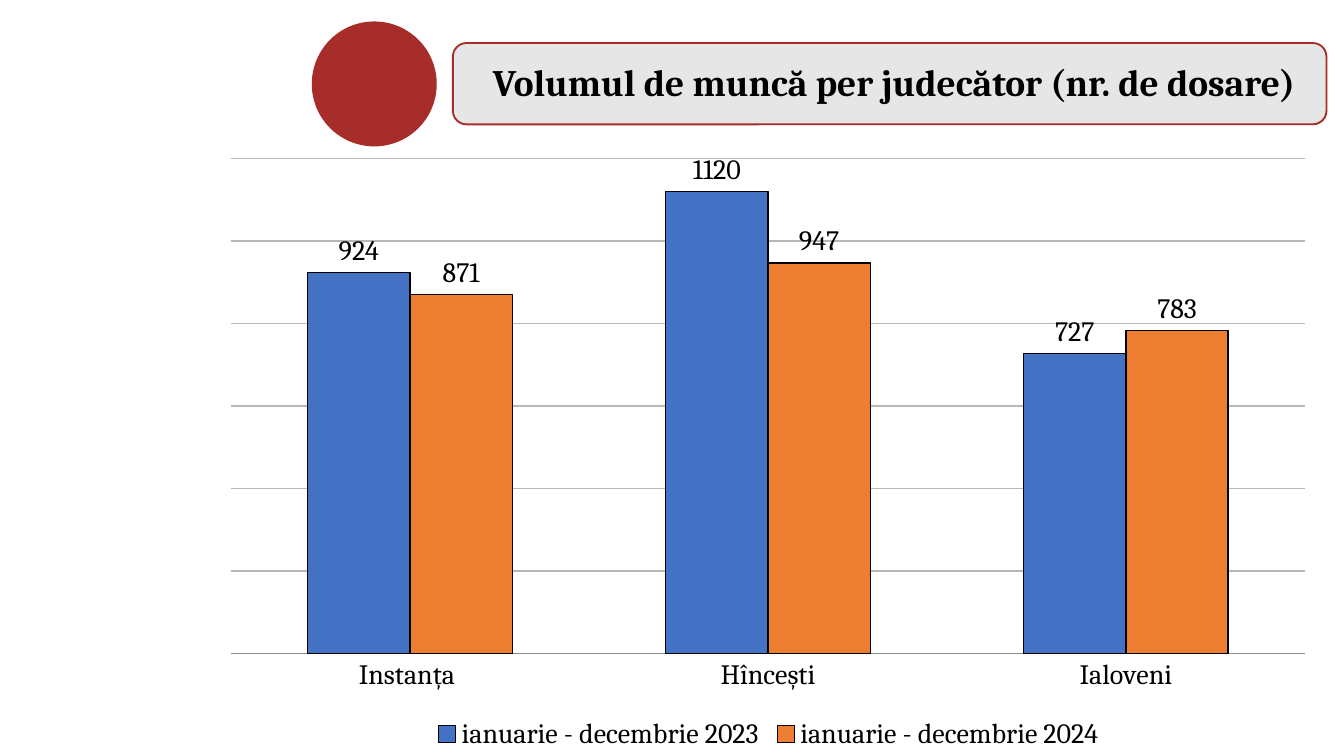
from typing import NamedTuple

from lxml import etree
from pptx import Presentation
from pptx.chart.data import CategoryChartData
from pptx.dml.color import RGBColor
from pptx.enum.chart import XL_CHART_TYPE, XL_LABEL_POSITION, XL_LEGEND_POSITION, XL_TICK_MARK
from pptx.enum.shapes import MSO_SHAPE
from pptx.enum.text import MSO_ANCHOR, MSO_AUTO_SIZE, PP_ALIGN
from pptx.oxml.ns import qn
from pptx.util import Pt

CLUSTERED = XL_CHART_TYPE.COLUMN_CLUSTERED
OUTSIDE_END = XL_LABEL_POSITION.OUTSIDE_END
BOTTOM = XL_LEGEND_POSITION.BOTTOM
NO_TICK = XL_TICK_MARK.NONE
OVAL = MSO_SHAPE.OVAL
ROUNDED = MSO_SHAPE.ROUNDED_RECTANGLE
MIDDLE = MSO_ANCHOR.MIDDLE
GROW = MSO_AUTO_SIZE.SHAPE_TO_FIT_TEXT
CENTER = PP_ALIGN.CENTER

SCALE = 4572  # EMU per px, 200 px to the inch
FONT = "Cambria"
RED, GREY, BLACK = "A72D2A", "E6E6E6", "000000"
GRID_GREY, AXIS_GREY = "B7B7B7", "8B8B8B"


class Box(NamedTuple):
    left: int
    top: int
    width: int
    height: int

    def emu(self) -> list[int]:
        return [length * SCALE for length in self]


class Panel(NamedTuple):
    preset: int
    box: Box
    fill: str
    line: str


class Series(NamedTuple):
    name: str
    values: tuple[int, ...]
    color: str
    number_format: str


PANELS = [
    Panel(OVAL, Box(464, 32, 186, 186), RED, ""),
    Panel(ROUNDED, Box(674, 64, 1300, 121), GREY, RED),
]
TITLE_BOX = Box(662, 86, 1338, 80)
CHART_BOX = Box(312, 218, 1664, 907)
PLOT_BOX = Box(344, 236, 1598, 737)
COURTS = ("Instanța ", "Hîncești", "Ialoveni")
SERIES = [
    Series("ianuarie - decembrie 2023", (924, 1120, 727), "4472C4", "0"),
    Series("ianuarie - decembrie 2024", (871, 947, 783), "ED7D31", "#,##0"),
]


def rgb(value: str) -> RGBColor:
    return RGBColor.from_string(value)


def set_line(line, color: str, width: float) -> None:
    line.color.rgb = rgb(color)
    line.width = Pt(width)


def set_font(font, size: int) -> None:
    font.name = FONT
    font.size = Pt(size)
    font.color.rgb = rgb(BLACK)


def add_panel(slide, panel: Panel) -> None:
    shape = slide.shapes.add_shape(panel.preset, *panel.box.emu())
    shape.shadow.inherit = False
    shape.fill.solid()
    shape.fill.fore_color.rgb = rgb(panel.fill)
    if panel.line:
        set_line(shape.line, panel.line, 1)
    else:
        shape.line.fill.background()


def place_title(slide, text: str) -> None:
    title = slide.shapes.title
    title.left, title.top, title.width, title.height = TITLE_BOX.emu()
    # Bring the title in front of its panel
    title.element.getparent().append(title.element)
    frame = title.text_frame
    frame.word_wrap = True
    frame.auto_size = GROW
    frame.vertical_anchor = MIDDLE
    paragraph = frame.paragraphs[0]
    paragraph.alignment = CENTER
    paragraph.line_spacing = 0.9
    run = paragraph.add_run()
    run.text = text
    set_font(run.font, 20)
    run.font.bold = True


def fix_plot_area(chart, frame: Box, plot: Box) -> None:
    plot_area = chart.element.find(".//" + qn("c:plotArea"))
    for old in plot_area.findall(qn("c:layout")):
        plot_area.remove(old)
    layout = etree.Element(qn("c:layout"))
    plot_area.insert(0, layout)
    manual = etree.SubElement(layout, qn("c:manualLayout"))
    settings = {
        "layoutTarget": "inner",
        "xMode": "edge",
        "yMode": "edge",
        "x": (plot.left - frame.left) / frame.width,
        "y": (plot.top - frame.top) / frame.height,
        "w": plot.width / frame.width,
        "h": plot.height / frame.height,
    }
    for name, value in settings.items():
        etree.SubElement(manual, qn("c:" + name)).set("val", str(value))


def add_workload_chart(slide) -> None:
    data = CategoryChartData(number_format="0")
    data.categories = COURTS
    for series in SERIES:
        data.add_series(series.name, series.values)
    chart = slide.shapes.add_chart(CLUSTERED, *CHART_BOX.emu(), data).chart
    set_font(chart.font, 15)
    chart.has_title = False
    chart.has_legend = True
    chart.legend.position = BOTTOM
    chart.legend.include_in_layout = False
    fix_plot_area(chart, CHART_BOX, PLOT_BOX)

    # Axes
    chart.category_axis.major_tick_mark = NO_TICK
    set_line(chart.category_axis.format.line, AXIS_GREY, 0.75)
    value_axis = chart.value_axis
    value_axis.minimum_scale, value_axis.maximum_scale = 0, 1200
    value_axis.major_unit = 200
    value_axis.has_major_gridlines = True
    set_line(value_axis.major_gridlines.format.line, GRID_GREY, 0.75)
    value_axis.visible = False

    # Columns and their labels
    plot = chart.plots[0]
    plot.gap_width, plot.overlap = 150, 0
    plot.vary_by_categories = False
    for column, series in zip(plot.series, SERIES):
        column.format.fill.solid()
        column.format.fill.fore_color.rgb = rgb(series.color)
        set_line(column.format.line, BLACK, 0.75)
        labels = column.data_labels
        labels.show_value = True
        labels.number_format = series.number_format
        labels.number_format_is_linked = False
        labels.position = OUTSIDE_END
        set_font(labels.font, 15)


def main() -> None:
    presentation = Presentation()
    presentation.slide_width = 2000 * SCALE
    presentation.slide_height = 1125 * SCALE
    slide = presentation.slides.add_slide(presentation.slide_layouts[5])

    # Heading
    for panel in PANELS:
        add_panel(slide, panel)
    place_title(slide, "Volumul de muncă per judecător (nr. de dosare)")

    # Workload per court
    add_workload_chart(slide)
    presentation.save("out.pptx")


if __name__ == "__main__":
    main()
